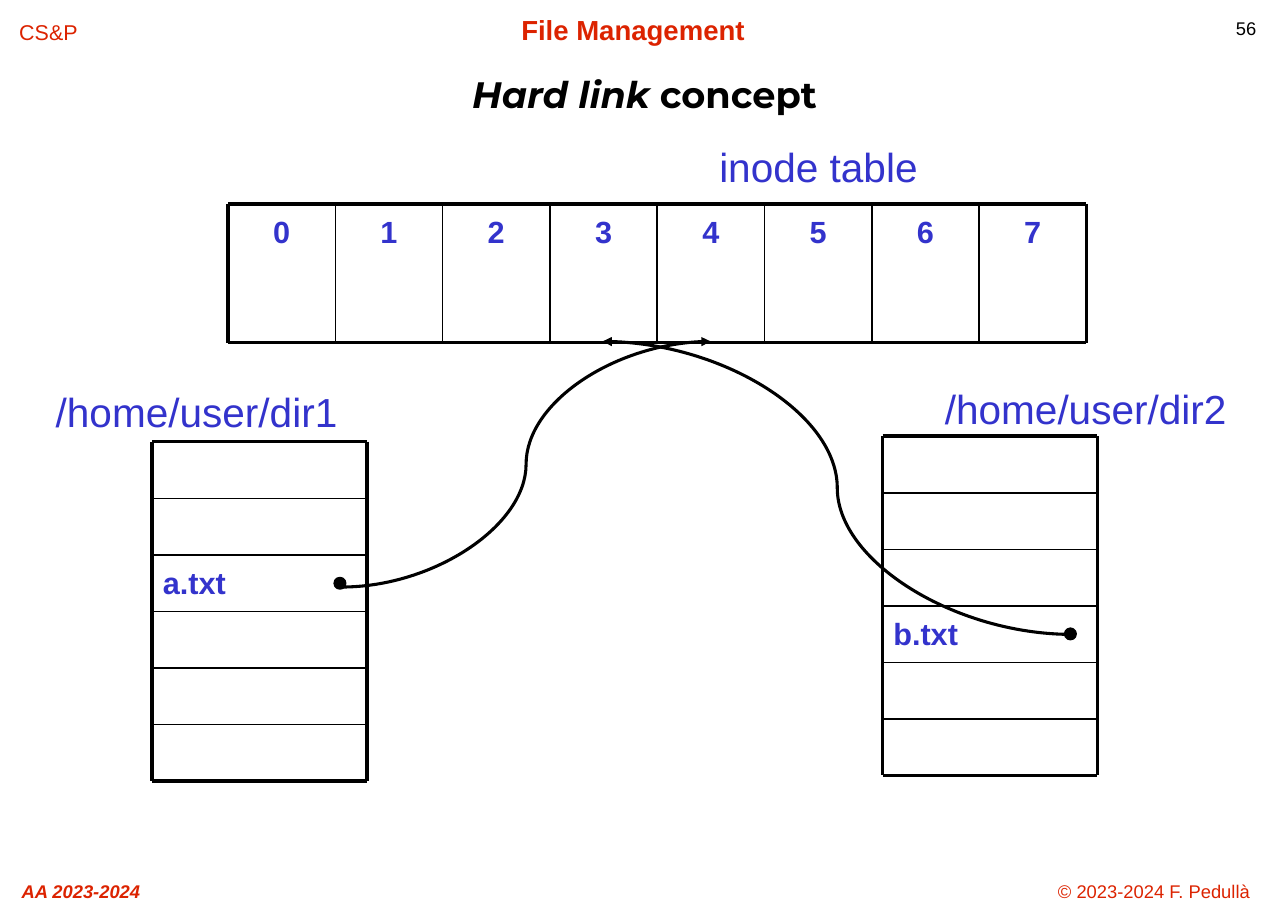
from lxml import etree
from pptx import Presentation
from pptx.dml.color import RGBColor
from pptx.enum.shapes import MSO_CONNECTOR as CONN, MSO_SHAPE as SHAPE
from pptx.enum.text import MSO_ANCHOR as ANCHOR, PP_ALIGN as ALIGN
from pptx.oxml.ns import qn
from pptx.util import Inches, Pt

RED, BLUE, BLACK = "DC2300", "3333CC", "000000"
OUTER, INNER = 2.25, 1


def rgb(hex_code):
    return RGBColor.from_string(hex_code)


def format_run(r, size, color, bold=False, italic=False, font="Arial"):
    r.font.name, r.font.size = font, Pt(size)
    r.font.bold, r.font.italic = bold, italic
    r.font.color.rgb = rgb(color)


def add_label(s, text, box, size, color, align=ALIGN.CENTER, spacing=1.01, **style):
    tf = s.shapes.add_textbox(*map(Inches, box)).text_frame
    tf.word_wrap = True
    p = tf.paragraphs[0]
    p.text, p.alignment, p.line_spacing = text, align, spacing
    format_run(p.runs[0], size, color, **style)


def add_heading(s, text, box):
    add_label(s, text, box, 26.5, BLUE, spacing=1.07)


def add_cell_text(s, text, box, align):
    add_label(s, text, box, 20, BLUE, align, Pt(26.2), bold=True)


def add_line(s, start, end, width, kind=CONN.STRAIGHT):
    line = s.shapes.add_connector(kind, *map(Inches, (*start, *end)))
    line.line.color.rgb = rgb(BLACK)
    line.line.width = Pt(width)
    etree.SubElement(line._element.spPr, qn("a:effectLst"))
    return line


def add_grid(s, left, top, width, height, rows, cols):
    """Rule a grid with a heavy frame and thin inner lines."""
    right, bottom = left + width, top + height
    for i in range(rows + 1):
        y = top + i * height / rows
        add_line(s, (left, y), (right, y), OUTER if i in (0, rows) else INNER)
    for i in range(cols + 1):
        x = left + i * width / cols
        add_line(s, (x, top), (x, bottom), OUTER if i in (0, cols) else INNER)


def add_header_and_footer(s, width, height):
    add_label(s, "CS&P", (0, 0.12, 0.88, 0.33), 14, RED)
    add_label(s, "File Management", (4.15, 0.07, 3.19, 0.33), 18, RED, bold=True)
    add_label(s, "56", (width - 0.57, 0.1, 0.57, 0.35), 12, BLACK, ALIGN.LEFT)
    foot = height - 0.33
    add_label(s, "AA 2023-2024", (0, foot, 1.47, 0.33), 12, RED, bold=True, italic=True)
    add_label(s, "© 2023-2024 F. Pedullà", (width - 2.43, foot, 2.43, 0.33), 12, RED)


def add_title(s, box):
    title = s.shapes.title
    title.left, title.top, title.width, title.height = map(Inches, box)
    tf = title.text_frame
    tf.vertical_anchor = ANCHOR.MIDDLE
    p = tf.paragraphs[0]
    p.alignment, p.line_spacing = ALIGN.CENTER, 0.85
    for text, italic in (("Hard link ", True), ("concept", False)):
        r = p.add_run()
        r.text = text
        format_run(r, 24, BLACK, bold=True, italic=italic, font="Montserrat")


def add_inode_table(s, left, top, width, height, count=8):
    add_heading(s, "inode table", (left + 3.66, top - 0.64, 3.4, 0.65))
    step = width / count
    for i in range(count):
        add_cell_text(s, str(i), (left + i * step, top, step, height), ALIGN.CENTER)
    add_grid(s, left, top, width, height, 1, count)


def add_directory(s, left, top, name, name_at, file_name, file_row):
    width, height, rows = 1.95, 3.08, 6
    step = height / rows
    add_heading(s, name, (*name_at, 2.95, 0.65))
    add_cell_text(s, file_name, (left, top + file_row * step, width, step), ALIGN.LEFT)
    add_grid(s, left, top, width, height, rows, 1)


def add_hard_link(s, dot, start, end):
    sp = s.shapes.add_shape(SHAPE.OVAL, *map(Inches, (*dot, 0.09, 0.09)))
    sp.shadow.inherit = False
    sp.fill.solid()
    sp.fill.fore_color.rgb = sp.line.color.rgb = rgb(BLACK)
    sp.line.width = Pt(2)
    curve = add_line(s, start, end, 2, CONN.CURVE)
    etree.SubElement(curve.line._get_or_add_ln(), qn("a:tailEnd"), type="triangle")


def main():
    width, height = 11.69, 8.27
    prs = Presentation()
    prs.slide_width, prs.slide_height = Inches(width), Inches(height)
    s = prs.slides.add_slide(prs.slide_layouts[5])
    add_header_and_footer(s, width, height)
    add_title(s, (3.45, 0.57, 4.8, 0.63))
    add_inode_table(s, 2.07, 1.85, 7.79, 1.26)
    add_directory(s, 1.38, 4.01, "/home/user/dir1", (0.31, 3.43), "a.txt", 2)
    add_directory(s, 8.01, 3.96, "/home/user/dir2", (8.38, 3.41), "b.txt", 3)
    add_hard_link(s, (3.04, 5.25), (3.1, 5.33), (6.45, 3.1))
    add_hard_link(s, (9.67, 5.71), (9.73, 5.76), (5.47, 3.1))
    prs.save("out.pptx")


if __name__ == "__main__":
    main()
